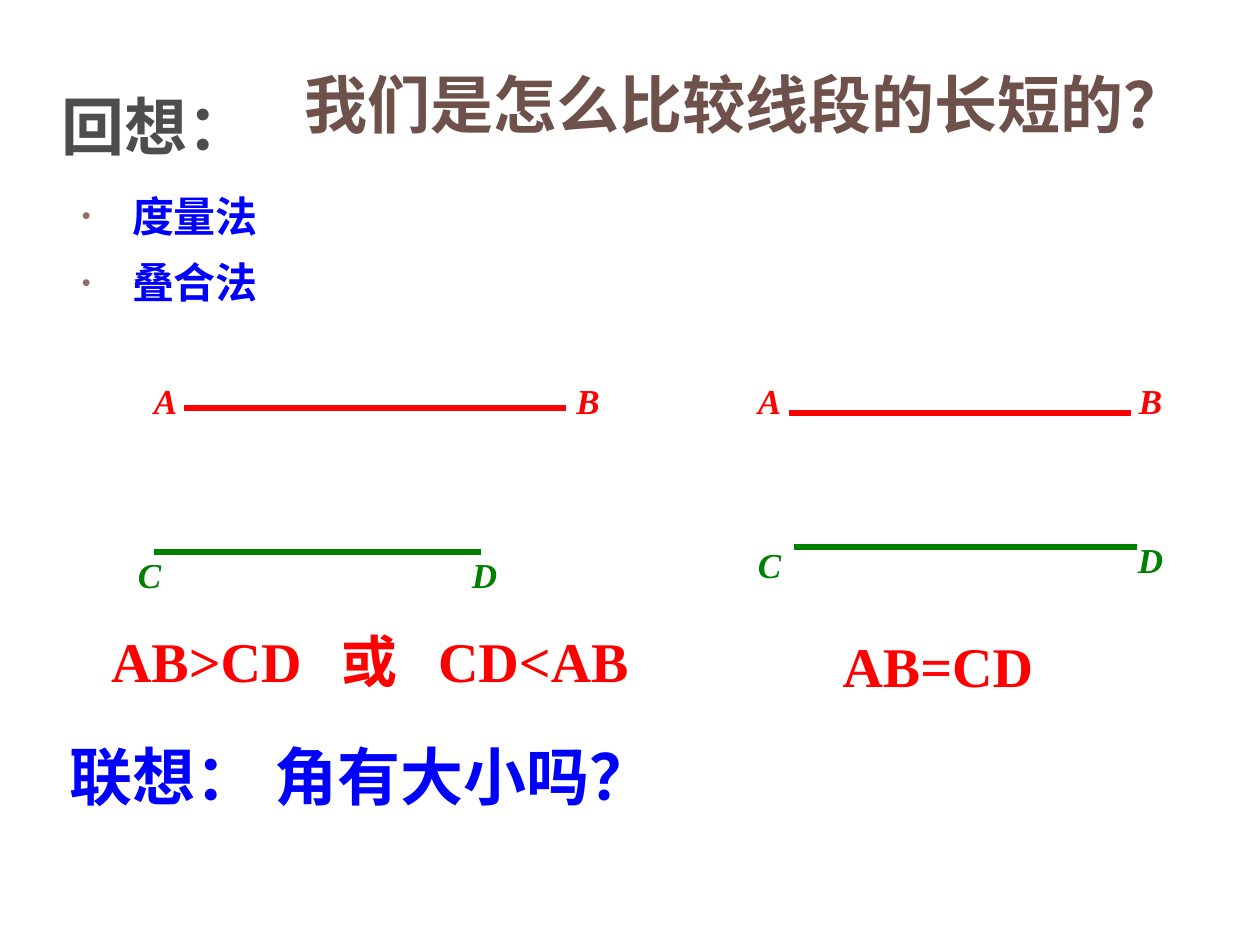
from lxml import etree
from pptx import Presentation
from pptx import util as u
from pptx.dml.color import RGBColor
from pptx.enum import shapes, text
from pptx.oxml import ns

PX = 914400 / 126
COLORS = {
    "brown": "6D514A",
    "bullet": "926C62",
    "gray": "4D4D4D",
    "blue": "0000FF",
    "red": "FF0000",
    "green": "008000",
}
SANS = "Noto Sans CJK SC"
SERIF = "Times New Roman"
CENTER = text.PP_ALIGN.CENTER
LEFT = text.PP_ALIGN.LEFT
MIDDLE = text.MSO_ANCHOR.MIDDLE


def px(value):
    return u.Emu(round(value * PX))


def add_child(parent, tag, **attributes):
    child = etree.SubElement(parent, ns.qn(tag))
    for name, value in attributes.items():
        child.set(name, str(value))
    return child


def add_bullet(paragraph):
    properties = paragraph._p.get_or_add_pPr()
    properties.set("marL", str(px(50)))
    properties.set("indent", str(-px(50)))
    color = add_child(properties, "a:buClr")
    add_child(color, "a:srgbClr", val=COLORS["bullet"])
    add_child(properties, "a:buSzPct", val=60000)
    add_child(properties, "a:buFont", typeface="Arial")
    add_child(properties, "a:buChar", char="•")


def add_tabs(paragraph, positions):
    tab_list = add_child(paragraph._p.get_or_add_pPr(), "a:tabLst")
    for position in positions:
        add_child(tab_list, "a:tab", pos=px(position), algn="l")


def write(shape, content, size, color, font=SANS, italic=False, align=CENTER,
          anchor=MIDDLE, left=13, right=13, bottom=6, tabs=(), bullet=False,
          line_spacing=None, gap=0):
    frame = shape.text_frame
    frame.word_wrap = True
    frame.auto_size = text.MSO_AUTO_SIZE.NONE
    frame.vertical_anchor = anchor
    frame.margin_left, frame.margin_right = px(left), px(right)
    frame.margin_top, frame.margin_bottom = px(6), px(bottom)
    for index, line in enumerate(content.split("\n")):
        paragraph = frame.add_paragraph() if index else frame.paragraphs[0]
        if bullet:
            add_bullet(paragraph)
        if tabs:
            add_tabs(paragraph, tabs)
        paragraph.alignment = align
        paragraph.space_before = u.Pt(gap if index else 0)
        if line_spacing:
            paragraph.line_spacing = line_spacing
        run = paragraph.add_run()
        run.text = line
        run.font.name = font
        run.font.size = u.Pt(size)
        run.font.bold = True
        run.font.italic = italic
        run.font.color.rgb = RGBColor.from_string(COLORS[color])
        add_child(run._r.get_or_add_rPr(), "a:ea", typeface=SANS)


def add_text(parent, box, content, size, color, **format_options):
    shape = parent.add_textbox(*map(px, box))
    write(shape, content, size, color, **format_options)


def add_title(slide):
    title = slide.shapes.title
    title.left, title.top, title.width, title.height = map(px, (292, 32, 922, 189))
    write(title, "我们是怎么比较线段的长短的？", 36, "brown",
          align=LEFT, bottom=42, line_spacing=0.9)


def add_segment(slide, color, line, labels):
    group = slide.shapes.add_group_shape().shapes
    start, end, y = line
    connector = group.add_connector(
        shapes.MSO_CONNECTOR.STRAIGHT, px(start), px(y), px(end), px(y))
    connector.line.color.rgb = RGBColor.from_string(COLORS[color])
    connector.line.width = u.Pt(3)
    add_child(connector._element.spPr, "a:effectLst")
    for letter, left, top, width in labels:
        add_text(group, (left, top, width, 54), letter, 20, color,
                 font=SERIF, italic=True)


def main():
    presentation = Presentation()
    presentation.slide_width = px(1260)
    presentation.slide_height = px(945)
    slide = presentation.slides.add_slide(presentation.slide_layouts[5])

    add_title(slide)
    add_text(slide.shapes, (69, 190, 1002, 208), "度量法\n叠合法", 24, "blue",
             align=text.PP_ALIGN.JUSTIFY, anchor=text.MSO_ANCHOR.TOP,
             bullet=True, line_spacing=0.9, gap=12)
    add_text(slide.shapes, (0, 81, 312, 88), "回想：", 36, "gray")

    add_segment(slide, "red", (184, 566, 408),
                [("A", 118, 373, 95), ("B", 546, 373, 84)])
    add_segment(slide, "green", (154, 481, 552),
                [("C", 110, 547, 79), ("D", 432, 547, 105)])
    add_text(slide.shapes, (44, 621, 650, 79), "AB>CD\t或\tCD<AB", 32, "red",
             font=SERIF, align=LEFT, left=67, tabs=(230, 327))
    add_text(slide.shapes, (-49, 731, 794, 88), "联想：\t角有大小吗？", 36, "blue",
             align=LEFT, left=119, tabs=(205,))

    add_segment(slide, "red", (789, 1131, 413),
                [("A", 735, 373, 69), ("B", 1116, 373, 69)])
    add_segment(slide, "green", (794, 1137, 547),
                [("C", 735, 537, 69), ("D", 1116, 532, 69)])
    add_text(slide.shapes, (740, 626, 427, 79), "AB=CD", 32, "red",
             font=SERIF, right=44)

    presentation.save("out.pptx")


if __name__ == "__main__":
    main()
